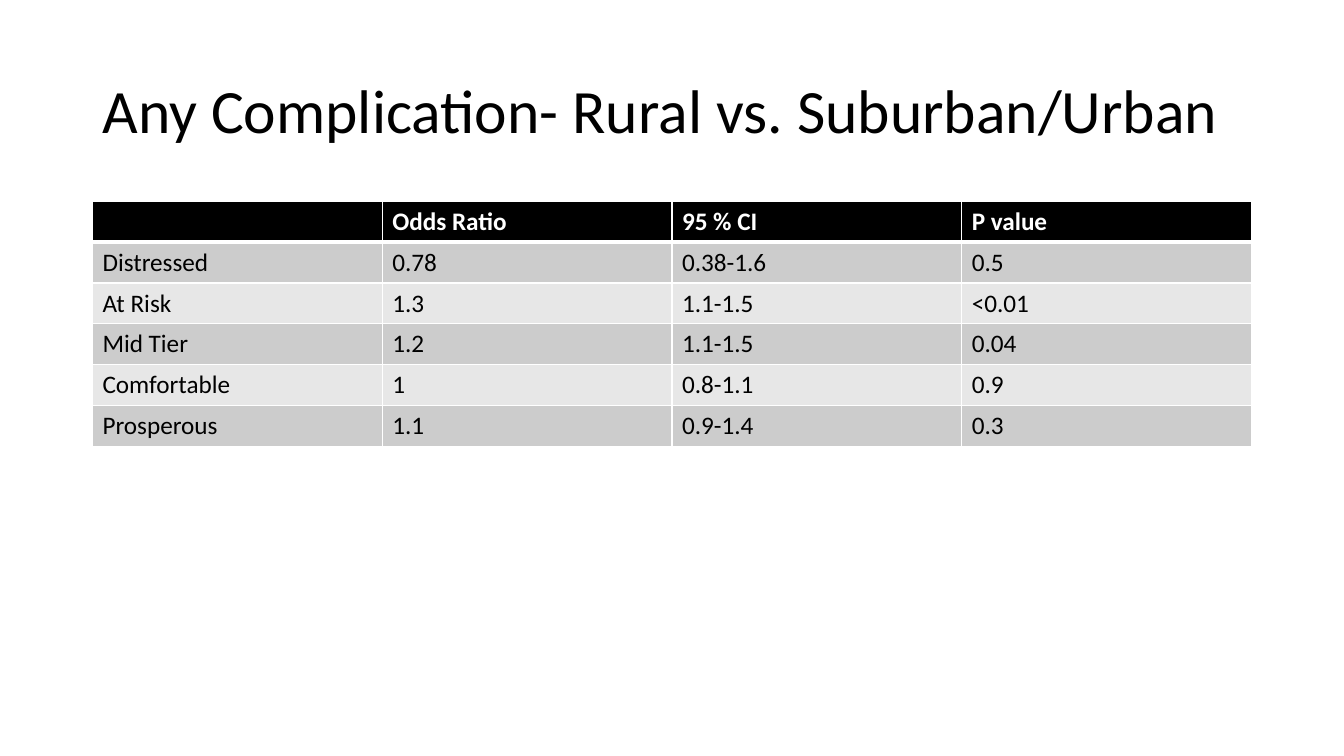
from dataclasses import dataclass

from lxml import etree
from pptx import Presentation
from pptx.dml.color import RGBColor
from pptx.enum.text import MSO_ANCHOR, PP_ALIGN
from pptx.oxml.ns import qn
from pptx.util import Cm, Pt

LEFT = PP_ALIGN.LEFT
MIDDLE = MSO_ANCHOR.MIDDLE
TITLE_ONLY = 5


@dataclass(frozen=True)
class Theme:
    font: str = "Calibri"
    title_size: int = 44
    table_size: int = 18
    black: str = "000000"
    white: str = "FFFFFF"
    bands: tuple = ("CCCCCC", "E7E7E7")
    thin: int = 1
    thick: int = 3


THEME = Theme()
TITLE = "Any Complication- Rural vs. Suburban/Urban"
ODDS = [
    ("", "Odds Ratio", "95 % CI", "P value"),
    ("Distressed", "0.78", "0.38-1.6", "0.5"),
    ("At Risk", "1.3", "1.1-1.5", "<0.01"),
    ("Mid Tier", "1.2", "1.1-1.5", "0.04"),
    ("Comfortable", "1", "0.8-1.1", "0.9"),
    ("Prosperous", "1.1", "0.9-1.4", "0.3"),
]


def write_text(text_frame, text, *, size, color=THEME.black, bold=False, line_spacing=None):
    paragraph = text_frame.paragraphs[0]
    paragraph.text = text
    paragraph.alignment = LEFT
    paragraph.line_spacing = line_spacing
    font = paragraph.font
    font.name = THEME.font
    font.size = Pt(size)
    font.bold = bold
    font.color.rgb = RGBColor.from_string(color)


def set_borders(cell, top, bottom):
    properties = cell._tc.get_or_add_tcPr()
    widths = {"a:lnL": THEME.thin, "a:lnR": THEME.thin, "a:lnT": top, "a:lnB": bottom}
    for tag, width in widths.items():
        line = etree.SubElement(properties, qn(tag), w=str(Pt(width)))
        fill = etree.SubElement(line, qn("a:solidFill"))
        etree.SubElement(fill, qn("a:srgbClr"), val=THEME.white)


def place_title(slide, left, top, width, height):
    title = slide.shapes.title
    title.left, title.top, title.width, title.height = left, top, width, height
    title.text_frame.word_wrap = True
    title.text_frame.vertical_anchor = MIDDLE
    write_text(title.text_frame, TITLE, size=THEME.title_size, line_spacing=0.9)


def place_odds_table(slide, left, top, width, height):
    frame = slide.shapes.add_table(len(ODDS), len(ODDS[0]), left, top, width, height)
    table = frame.table
    for row_index, values in enumerate(ODDS):
        is_header = row_index == 0
        fill = THEME.black if is_header else THEME.bands[(row_index - 1) % 2]
        color = THEME.white if is_header else THEME.black
        top_width = THEME.thick if row_index == 1 else THEME.thin
        bottom_width = THEME.thick if is_header else THEME.thin
        for column_index, value in enumerate(values):
            cell = table.cell(row_index, column_index)
            set_borders(cell, top_width, bottom_width)
            cell.fill.solid()
            cell.fill.fore_color.rgb = RGBColor.from_string(fill)
            write_text(cell.text_frame, value, size=THEME.table_size, color=color, bold=is_header)


def main():
    presentation = Presentation()
    presentation.slide_width = Cm(33.87)
    presentation.slide_height = Cm(19.05)
    slide = presentation.slides.add_slide(presentation.slide_layouts[TITLE_ONLY])
    margin = Cm(2.33)
    content_width = presentation.slide_width - 2 * margin
    place_title(slide, margin, Cm(1.01), content_width, Cm(3.68))
    place_odds_table(slide, margin, Cm(5.07), content_width, Cm(6.18))
    presentation.save("out.pptx")


if __name__ == "__main__":
    main()
